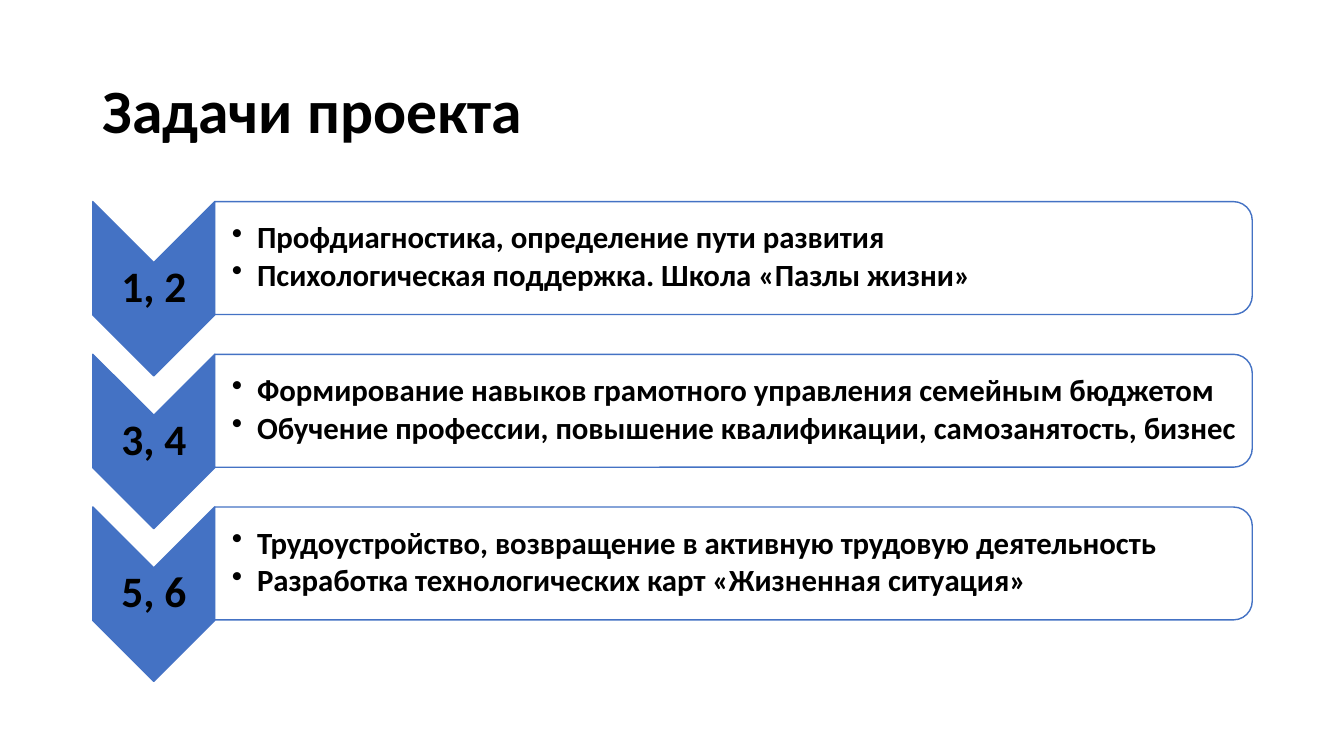
import pptx
import pptx.dml.color
import pptx.enum.shapes
import pptx.enum.text
import pptx.oxml.ns
import pptx.util
from lxml import etree

Inches = pptx.util.Inches
Pt = pptx.util.Pt
MSO_SHAPE = pptx.enum.shapes.MSO_SHAPE
PP_ALIGN = pptx.enum.text.PP_ALIGN
qn = pptx.oxml.ns.qn

COLORS = {"accent": "4472C4", "panel": "FFFFFF", "text": "000000"}
FONT = "Calibri"

TASKS = [
    ("1, 2", ["Профдиагностика, определение пути развития",
              "Психологическая поддержка. Школа «Пазлы жизни»"]),
    ("3, 4", ["Формирование навыков грамотного управления семейным бюджетом",
              "Обучение профессии, повышение квалификации, самозанятость, бизнес"]),
    ("5, 6", ["Трудоустройство, возвращение в активную трудовую деятельность",
              "Разработка технологических карт «Жизненная ситуация»"]),
]

FIRST_TOP = 2.0
ROW_PITCH = 1.515
CHEVRON_LEFT, CHEVRON_WIDTH, CHEVRON_HEIGHT = 0.92, 1.21, 1.73
PANEL_LEFT, PANEL_WIDTH, PANEL_HEIGHT = 2.13, 10.29, 1.12


def rgb(name):
    return pptx.dml.color.RGBColor.from_string(COLORS[name])


def add_turned_shape(slide, kind, left, top, width, height, fill):
    """Add a shape turned by 90 degrees; the box given is the one it covers on the slide."""
    shape = slide.shapes.add_shape(
        kind,
        Inches(left + (width - height) / 2), Inches(top + (height - width) / 2),
        Inches(height), Inches(width))
    shape.rotation = 90
    shape.shadow.inherit = False
    shape.fill.solid()
    shape.fill.fore_color.rgb = rgb(fill)
    shape.line.color.rgb = rgb("accent")
    shape.line.width = Pt(1)
    return shape


def set_opacity(shape, percent):
    color = shape.fill._xPr.find(qn("a:solidFill"))[0]
    etree.SubElement(color, qn("a:alpha"), val=str(percent * 1000))


def add_text(slide, left, top, width, height, lines, size, insets=None,
             align=PP_ALIGN.LEFT, space_after=0):
    box = slide.shapes.add_textbox(Inches(left), Inches(top), Inches(width), Inches(height))
    frame = box.text_frame
    frame.word_wrap = True
    frame.vertical_anchor = pptx.enum.text.MSO_ANCHOR.MIDDLE
    if insets:
        (frame.margin_left, frame.margin_top,
         frame.margin_right, frame.margin_bottom) = map(Inches, insets)
    frame.text = "\n".join(lines)
    for paragraph in frame.paragraphs:
        paragraph.alignment = align
        paragraph.line_spacing = 0.9
        paragraph.space_after = Pt(space_after)
        paragraph.font.name = FONT
        paragraph.font.size = Pt(size)
        paragraph.font.bold = True
        paragraph.font.color.rgb = rgb("text")
    return box


def add_bullets(box):
    for paragraph in box.text_frame.paragraphs:
        properties = paragraph._p.get_or_add_pPr()
        properties.set("marL", str(Inches(0.25)))
        properties.set("indent", str(Inches(-0.25)))
        bullet = etree.Element(qn("a:buChar"), char="•")
        properties.find(qn("a:defRPr")).addprevious(bullet)


def add_task_row(slide, top, numbers, tasks):
    add_turned_shape(slide, MSO_SHAPE.CHEVRON, CHEVRON_LEFT, top,
                     CHEVRON_WIDTH, CHEVRON_HEIGHT, "accent")
    add_text(slide, CHEVRON_LEFT, top + 0.6, CHEVRON_WIDTH, 0.52, [numbers], 31,
             insets=(0.02, 0.02, 0.02, 0.02), align=PP_ALIGN.CENTER)
    panel = add_turned_shape(slide, MSO_SHAPE.ROUND_2_SAME_RECTANGLE, PANEL_LEFT, top,
                             PANEL_WIDTH, PANEL_HEIGHT, "panel")
    set_opacity(panel, 90)
    task_box = add_text(slide, PANEL_LEFT, top + 0.05, 10.24, 1.01, tasks, 22,
                        insets=(0.17, 0.02, 0.02, 0.02), space_after=3.3)
    add_bullets(task_box)


def main():
    presentation = pptx.Presentation()
    presentation.slide_width = Inches(13.33)
    presentation.slide_height = Inches(7.5)
    slide = presentation.slides.add_slide(presentation.slide_layouts[6])
    add_text(slide, 0.92, 0.4, 11.5, 1.45, ["Задачи проекта"], 44)
    for row, (numbers, tasks) in enumerate(TASKS):
        add_task_row(slide, FIRST_TOP + row * ROW_PITCH, numbers, tasks)
    presentation.save("out.pptx")


if __name__ == "__main__":
    main()
